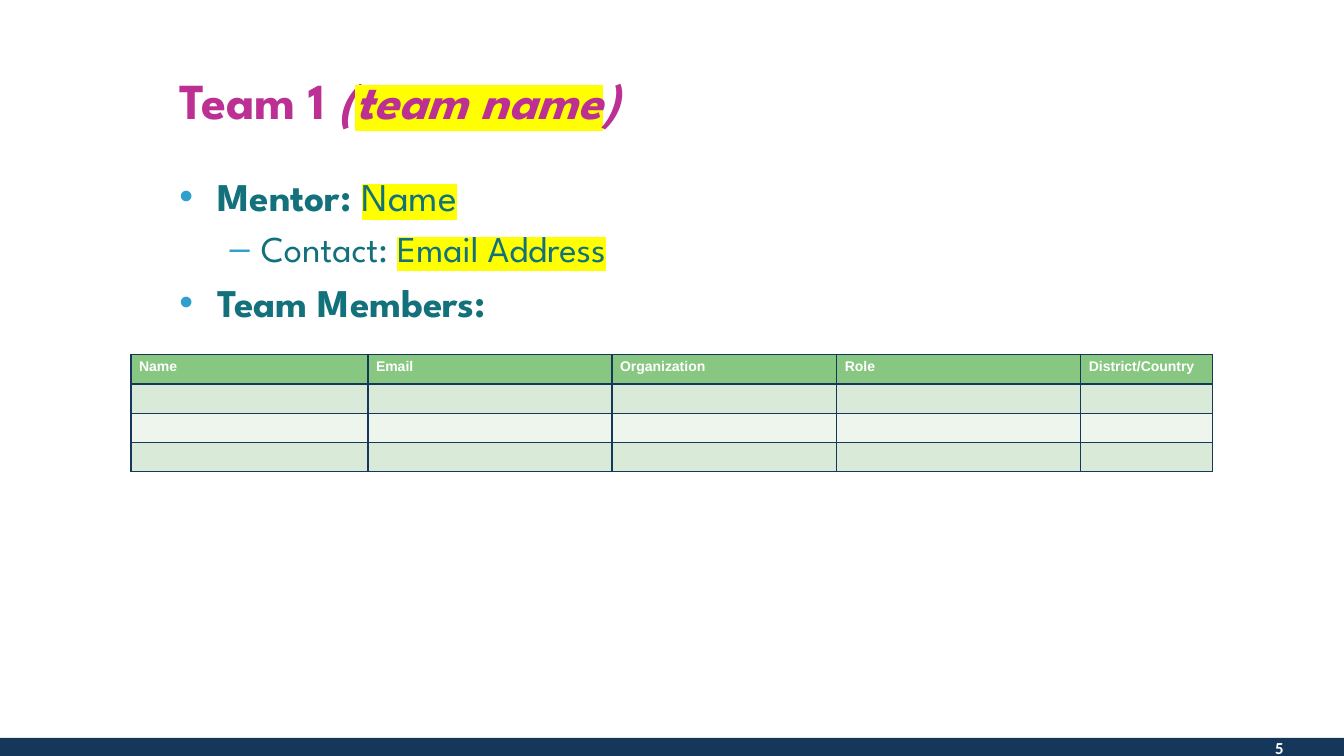
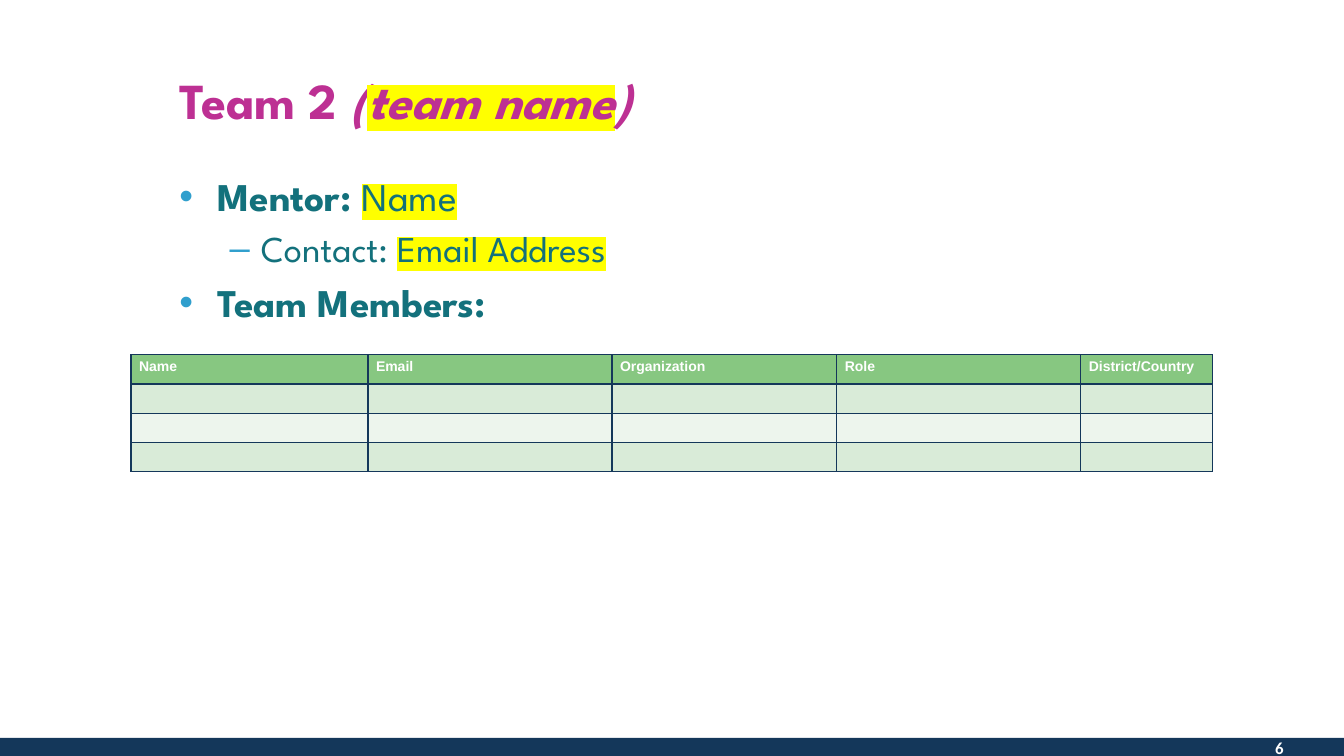
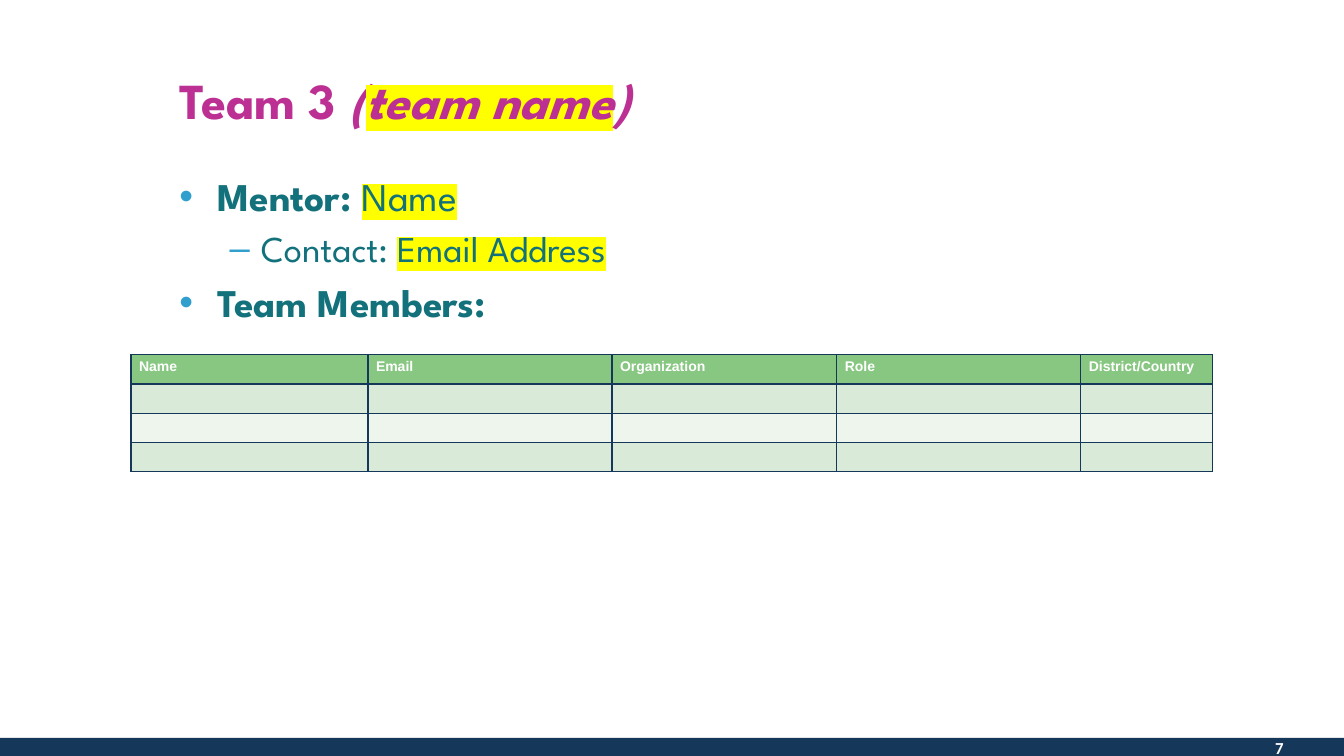
from dataclasses import dataclass
from itertools import product

from lxml.etree import SubElement
from pptx import Presentation
from pptx.dml.color import RGBColor
from pptx.enum.shapes import MSO_SHAPE
from pptx.enum.text import MSO_ANCHOR, MSO_AUTO_SIZE, PP_ALIGN
from pptx.oxml import parse_xml
from pptx.oxml.ns import nsdecls, qn
from pptx.util import Inches, Pt


@dataclass(frozen=True)
class Theme:
    navy: str = "14375A"
    pink: str = "BD3093"
    teal: str = "13717C"
    blue: str = "309FCD"
    green: str = "87C781"
    mint: str = "D9EBD8"
    pale: str = "EDF5ED"
    white: str = "FFFFFF"
    mark: str = "FFFF00"
    main: str = "League Spartan"
    cell: str = "Arial"
    foot: str = "Calibri"
    head: int = 36
    body: int = 28
    sub: int = 26
    page: int = 12
    grid: int = 10


def write(par, text, size, color, font, bold=False, italic=False, mark=None):
    run = par.add_run()
    run.text = text
    face = run.font
    face.size, face.name = Pt(size), font
    face.bold, face.italic = bold, italic
    face.color.rgb = RGBColor.from_string(color)
    if mark:
        fill = run._r.rPr.find(qn("a:solidFill"))
        fill.addnext(parse_xml(
            f'<a:highlight {nsdecls("a")}><a:srgbClr val="{mark}"/></a:highlight>'))


class Deck:
    def __init__(self, theme):
        self.look = theme
        self.prs = Presentation()
        self.prs.slide_width = Inches(13.33)
        self.prs.slide_height = Inches(7.5)
        self.slide = None

    def start(self, page):
        self.slide = self.prs.slides.add_slide(self.prs.slide_layouts[5])
        self.band()
        self.page(page)

    def band(self):
        bar = self.slide.shapes.add_shape(
            MSO_SHAPE.RECTANGLE, 0, Inches(7.32), self.prs.slide_width, Inches(0.21))
        bar.shadow.inherit = False
        bar.fill.solid()
        bar.fill.fore_color.rgb = RGBColor.from_string(self.look.navy)
        bar.line.fill.background()

    def box(self, left, top, width, height):
        frame = self.slide.shapes.add_textbox(
            Inches(left), Inches(top), Inches(width), Inches(height)).text_frame
        frame.word_wrap = True
        return frame

    def page(self, number):
        look = self.look
        frame = self.box(12.11, 7.32, 0.72, 0.2)
        frame.margin_top = frame.margin_bottom = 0
        par = frame.paragraphs[0]
        par.alignment = PP_ALIGN.RIGHT
        write(par, str(number), look.page, look.white, look.foot, bold=True)

    def title(self, team):
        look = self.look
        shape = self.slide.shapes.title
        shape.left, shape.top = Inches(1.68), Inches(0.4)
        shape.width, shape.height = Inches(7.9), Inches(1.18)
        frame = shape.text_frame
        frame.auto_size = MSO_AUTO_SIZE.NONE
        frame.vertical_anchor = MSO_ANCHOR.MIDDLE
        par = frame.paragraphs[0]
        par.alignment = PP_ALIGN.LEFT
        parts = ((f"Team {team} ", False, None), ("(", True, None),
                 ("team name", True, look.mark), (")", True, None))
        for text, slant, mark in parts:
            write(par, text, look.head, look.pink, look.main,
                  bold=True, italic=slant, mark=mark)

    def bullet(self, par, level):
        left, hang, sign = ((0.38, 0.38, "•"), (0.81, 0.31, "–"))[level]
        par.level = level
        props = par._p.get_or_add_pPr()
        props.set("marL", str(Inches(left)))
        props.set("indent", str(-Inches(hang)))
        gap = SubElement(props, qn("a:spcBef"))
        SubElement(gap, qn("a:spcPct"), val="20000")
        tint = SubElement(props, qn("a:buClr"))
        SubElement(tint, qn("a:srgbClr"), val=self.look.blue)
        SubElement(props, qn("a:buFont"), typeface=self.look.cell)
        SubElement(props, qn("a:buChar"), char=sign)

    def list(self, items):
        look = self.look
        frame = self.box(1.68, 1.66, 10.43, 4.86)
        for spot, (level, label, value) in enumerate(items):
            par = frame.add_paragraph() if spot else frame.paragraphs[0]
            self.bullet(par, level)
            size = look.sub if level else look.body
            write(par, label, size, look.teal, look.main, bold=not level)
            if value:
                write(par, value, size, look.teal, look.main, mark=look.mark)

    def border(self, cell):
        props = cell._tc.get_or_add_tcPr()
        for side in ("lnL", "lnR", "lnT", "lnB"):
            line = SubElement(props, qn(f"a:{side}"), w=str(Pt(1)))
            fill = SubElement(line, qn("a:solidFill"))
            SubElement(fill, qn("a:srgbClr"), val=self.look.navy)

    def table(self, heads, widths, fills):
        look = self.look
        high = 0.29
        grid = self.slide.shapes.add_table(
            len(fills), len(heads), Inches(1.3), Inches(3.52),
            Inches(sum(widths)), Inches(high * len(fills))).table
        for col, width in zip(grid.columns, widths):
            col.width = Inches(width)
        for row in grid.rows:
            row.height = Inches(high)
        for row, col in product(range(len(fills)), range(len(heads))):
            cell = grid.cell(row, col)
            cell.margin_left = cell.margin_right = Inches(0.08)
            cell.margin_top = cell.margin_bottom = Inches(0.04)
            self.border(cell)
            cell.fill.solid()
            cell.fill.fore_color.rgb = RGBColor.from_string(fills[row])
            par = cell.text_frame.paragraphs[0]
            if row:
                SubElement(par._p, qn("a:endParaRPr"), sz=str(look.grid * 100))
            else:
                write(par, heads[col], look.grid, look.white, look.cell, bold=True)


def main():
    look = Theme()
    deck = Deck(look)
    items = ((0, "Mentor: ", "Name"), (1, "Contact: ", "Email Address"),
             (0, "Team Members:", None))
    heads = ("Name", "Email", "Organization", "Role", "District/Country")
    widths = (2.35, 2.42, 2.23, 2.42, 1.31)
    fills = (look.green, look.mint, look.pale, look.mint)
    for team in range(1, 4):
        deck.start(team + 4)
        deck.title(team)
        deck.list(items)
        deck.table(heads, widths, fills)
    deck.prs.save("out.pptx")


if __name__ == "__main__":
    main()
